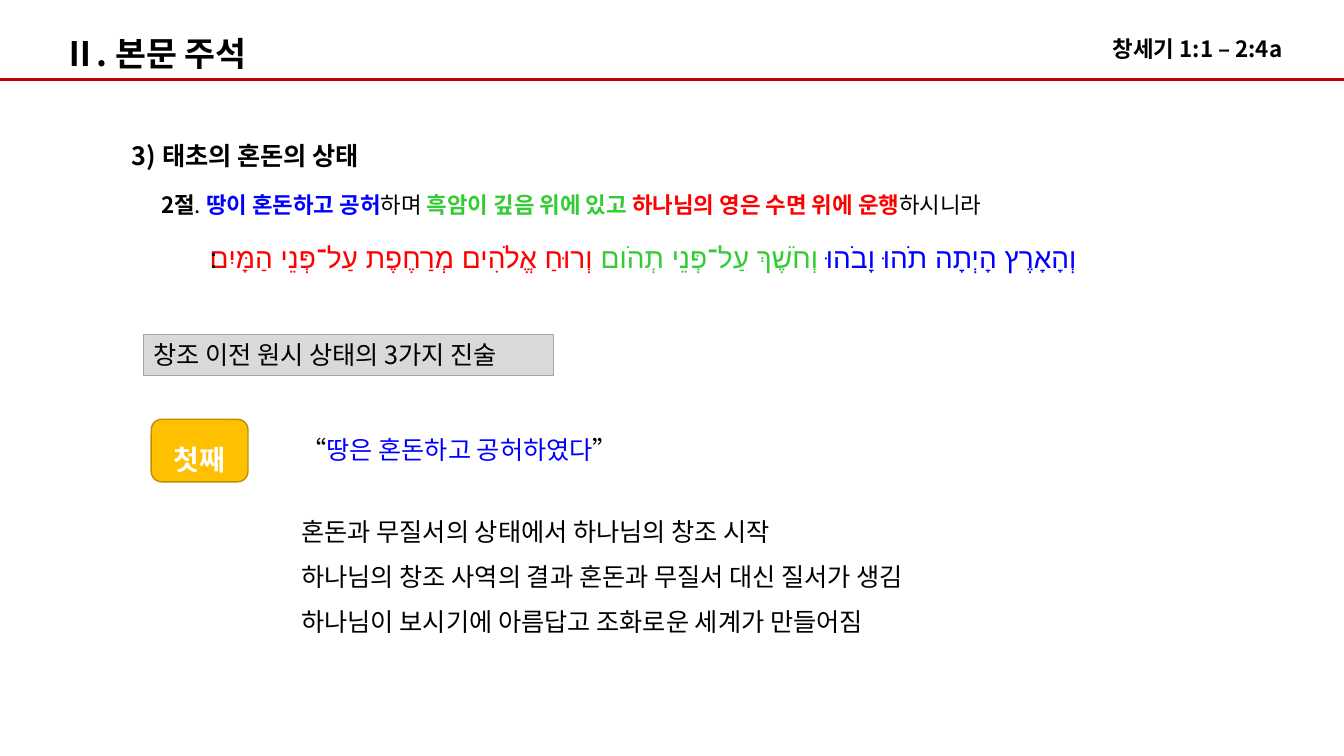
from lxml import etree
from pptx import Presentation
from pptx.dml.color import RGBColor
from pptx.enum.shapes import MSO_CONNECTOR as CONN, MSO_SHAPE as SHAPE
from pptx.enum.text import MSO_ANCHOR as ANCHOR, MSO_AUTO_SIZE as AUTO, PP_ALIGN as ALIGN
from pptx.oxml.ns import qn
from pptx.util import Pt

PX = 9144  # 100 px to the inch
KOREAN = "Noto Sans CJK KR"
HEBREW = "Arial"

BLACK = RGBColor(0x00, 0x00, 0x00)
WHITE = RGBColor(0xFF, 0xFF, 0xFF)
BLUE = RGBColor(0x00, 0x00, 0xFF)
GREEN = RGBColor(0x33, 0xCC, 0x33)
RED = RGBColor(0xFF, 0x00, 0x00)
DARK_RED = RGBColor(0xC0, 0x00, 0x00)
LIGHT_GREY = RGBColor(0xD9, 0xD9, 0xD9)
MID_GREY = RGBColor(0xA5, 0xA5, 0xA5)
GOLD = RGBColor(0xFF, 0xC0, 0x00)
DARK_GOLD = RGBColor(0xBD, 0x8E, 0x00)


def px(*lengths):
    return [n * PX for n in lengths]


def format_run(r, size, color, bold, font):
    r.font.size = Pt(size)
    r.font.bold = bold
    r.font.color.rgb = color
    r.font.name = font
    for tag in ("a:ea", "a:cs"):
        etree.SubElement(r.font._element, qn(tag)).set("typeface", font)


def fill_text(tf, paragraphs, size, bold=False, font=KOREAN, spacing=None,
              align=ALIGN.LEFT, wrap=True, anchor=ANCHOR.TOP, grow=True):
    """Each paragraph is a list of (text, color) or (text, color, bold) runs."""
    tf.word_wrap = wrap
    tf.auto_size = AUTO.SHAPE_TO_FIT_TEXT if grow else AUTO.NONE
    tf.vertical_anchor = anchor
    for i, runs in enumerate(paragraphs):
        p = tf.add_paragraph() if i else tf.paragraphs[0]
        p.alignment = align
        if spacing:
            p.line_spacing = spacing
        for text, color, *weight in runs:
            r = p.add_run()
            r.text = text
            format_run(r, size, color, weight[0] if weight else bold, font)


def add_text(s, box, paragraphs, size, **style):
    tb = s.shapes.add_textbox(*px(*box))
    fill_text(tb.text_frame, paragraphs, size, **style)


def add_label(s, kind, box, fill, line, width, paragraphs, size, **style):
    sp = s.shapes.add_shape(kind, *px(*box))
    sp.shadow.inherit = False
    sp.fill.solid()
    sp.fill.fore_color.rgb = fill
    sp.line.color.rgb = line
    sp.line.width = Pt(width)
    fill_text(sp.text_frame, paragraphs, size, **style)


def add_rule(s, x1, y1, x2, y2, color, width):
    line = s.shapes.add_connector(CONN.STRAIGHT, *px(x1, y1, x2, y2))
    line.line.color.rgb = color
    line.line.width = Pt(width)
    etree.SubElement(line._element.spPr, qn("a:effectLst"))


def main():
    prs = Presentation()
    prs.slide_width, prs.slide_height = px(1333, 750)
    s = prs.slides.add_slide(prs.slide_layouts[6])

    # Header
    add_text(s, (1094, 17, 207, 50), [[("창세기 1:1 – 2:4a", BLACK)]], 16,
             bold=True, spacing=1.5, align=ALIGN.JUSTIFY, wrap=False)
    add_rule(s, -1, 79, 1333, 79, DARK_RED, 2.25)
    add_text(s, (53, 28, 221, 50), [[("Ⅱ. 본문 주석", BLACK)]], 24,
             bold=True, wrap=False)

    # Verse in Korean and Hebrew
    add_text(s, (121, 119, 359, 50), [[("3) 태초의 혼돈의 상태", BLACK)]], 18,
             bold=True, spacing=1.5)
    add_text(s, (150, 185, 994, 37), [[
        ("2절", BLACK, True),
        (". ", BLACK),
        ("땅이 혼돈하고 공허", BLUE, True),
        ("하며 ", BLACK),
        ("흑암이 깊음 위에 있고 ", GREEN, True),
        ("하나님의 영은 수면 위에 운행", RED, True),
        ("하시니라", BLACK),
    ]], 16)
    add_text(s, (198, 233, 890, 44), [[
        ("וְהָאָרֶץ הָיְתָה תֹהוּ וָבֹהוּ ", BLUE),
        ("וְחֹשֶׁךְ עַל־פְּנֵי תְהֹום ", GREEN),
        ("וְרוּחַ אֱלֹהִים מְרַחֶפֶת עַל־פְּנֵי הַמָּיִם", RED),
        ("׃", BLACK),
    ]], 20, font=HEBREW, anchor=ANCHOR.MIDDLE)

    # First statement
    add_label(s, SHAPE.RECTANGLE, (142, 332, 407, 40), LIGHT_GREY, MID_GREY, 0.5,
              [[("창조 이전 원시 상태의 3가지 진술", BLACK)]], 18, wrap=False)
    add_label(s, SHAPE.ROUNDED_RECTANGLE, (150, 416, 96, 62), GOLD, DARK_GOLD, 1,
              [[("첫째", WHITE)]], 20, bold=True, spacing=1.5,
              align=ALIGN.CENTER, anchor=ANCHOR.MIDDLE, grow=False)
    add_text(s, (289, 426, 335, 40), [[
        ("“", BLACK), ("땅은 혼돈하고 공허하였다", BLUE), ("”", BLACK),
    ]], 18, wrap=False)
    add_text(s, (289, 492, 698, 141), [
        [("혼돈과 무질서의 상태에서 하나님의 창조 시작", BLACK)],
        [("하나님의 창조 사역의 결과 혼돈과 무질서 대신 질서가 생김", BLACK)],
        [("하나님이 보시기에 아름답고 조화로운 세계가 만들어짐", BLACK)],
    ], 18, spacing=1.5, wrap=False)

    prs.save("out.pptx")


if __name__ == "__main__":
    main()
